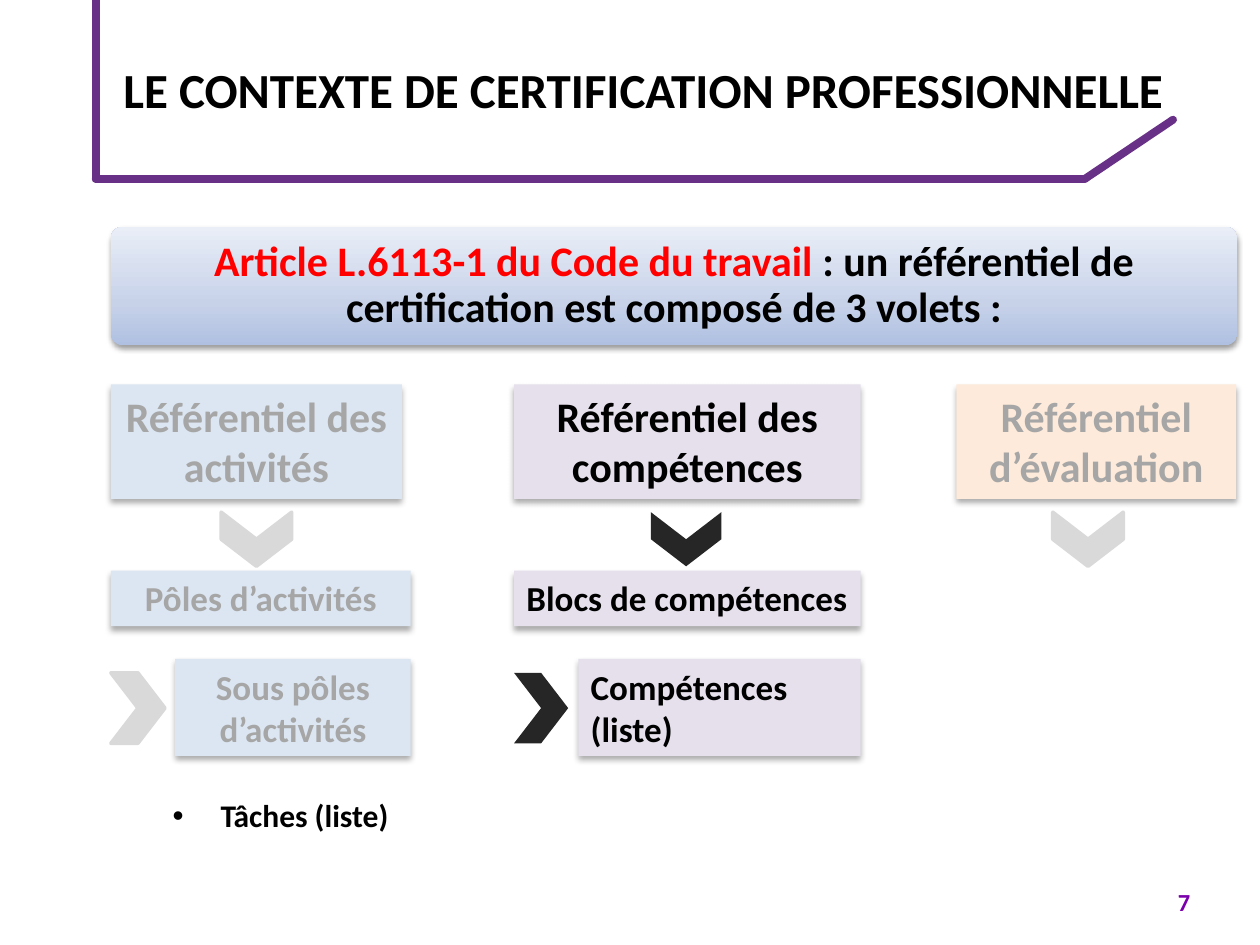
from lxml import etree
from pptx import Presentation
from pptx import util as u
from pptx.dml.color import RGBColor
from pptx.enum import shapes, text
from pptx.oxml import parse_xml
from pptx.oxml.ns import qn, nsdecls

COLORS = {
    "purple": "683086", "number": "7B00AC", "black": "000000", "red": "FF0000",
    "muted": "A6A6A6", "pale": "D9D9D9", "dark": "262626",
    "blue": "DCE6F2", "lilac": "E6E0EC", "peach": "FDEADA",
}
GRADIENT = [(0, "AFC0E1"), (35, "C7D2E9"), (100, "E9EEF7")]
FONT = "Calibri"
LEFT, CENTER = text.PP_ALIGN.LEFT, text.PP_ALIGN.CENTER
COL1, COL2, COL3 = 0.88, 4.08, 7.59
HEAD_Y, DOWN_Y, BLOCK_Y, SUB_Y = 3.05, 4.0, 4.53, 5.23
INDENT = 0.51
CHEVRON_W, CHEVRON_H = 0.43, 0.56

TITLE = "LE CONTEXTE DE CERTIFICATION PROFESSIONNELLE"
BANNER = [("Article L.6113-1 du Code du travail ", "red"),
          (": un référentiel de certification est composé de 3 volets :", "black")]
FRAME = [(0.76, 1.42, 8.61, 1.42), (8.61, 1.42, 9.31, 0.95), (0.76, 1.42, 0.76, 0)]
# text, left, top, width, height, fill, font colour, size, alignment
BOXES = [
    ("Référentiel des activités", COL1, HEAD_Y, 2.31, 0.91, "blue", "muted", 24, CENTER),
    ("Référentiel des compétences", COL2, HEAD_Y, 2.75, 0.91, "lilac", "black", 24, CENTER),
    ("Référentiel d’évaluation", COL3, HEAD_Y, 2.22, 0.91, "peach", "muted", 24, CENTER),
    ("Pôles d’activités", COL1, BLOCK_Y, 2.38, 0.44, "blue", "muted", 20, CENTER),
    ("Blocs de compétences", COL2, BLOCK_Y, 2.75, 0.44, "lilac", "black", 20, LEFT),
    ("Sous pôles d’activités", COL1 + INDENT, SUB_Y, 1.87, 0.77, "blue", "muted", 20, CENTER),
    ("Compétences (liste)", COL2 + INDENT, SUB_Y, 2.24, 0.77, "lilac", "black", 20, LEFT),
]
# left, top, rotation, colour
CHEVRONS = [
    (1.82, DOWN_Y, 90, "pale"), (5.23, DOWN_Y, 90, "dark"), (8.42, DOWN_Y, 90, "pale"),
    (COL1, SUB_Y + 0.11, 0, "pale"), (COL2, SUB_Y + 0.11, 0, "dark"),
]


def rgb(name):
    return RGBColor.from_string(COLORS[name])


def place(sp, *box):
    sp.left, sp.top, sp.width, sp.height = map(u.Inches, box)


def write(tf, runs, size, align=LEFT, anchor=text.MSO_ANCHOR.TOP):
    """Fill a text frame with one bold paragraph of (text, colour) runs."""
    tf.word_wrap = True
    tf.auto_size = text.MSO_AUTO_SIZE.NONE
    tf.vertical_anchor = anchor
    p = tf.paragraphs[0]
    p.alignment = align
    for words, color in runs:
        r = p.add_run()
        r.text = words
        r.font.name, r.font.size, r.font.bold = FONT, u.Pt(size), True
        r.font.color.rgb = rgb(color)
    return p


def add_block(s, kind, box, color):
    sp = s.shapes.add_shape(kind, *map(u.Inches, box))
    sp.fill.solid()
    sp.fill.fore_color.rgb = rgb(color)
    sp.line.fill.background()
    sp.shadow.inherit = False
    return sp


def add_shadow(sp, alpha, blur, dist):
    effects = sp._element.spPr.find(qn("a:effectLst"))
    effects.append(parse_xml(
        f'<a:outerShdw {nsdecls("a")} blurRad="{u.Pt(blur)}" dist="{u.Pt(dist)}" '
        f'dir="5400000" rotWithShape="0"><a:srgbClr val="000000">'
        f'<a:alpha val="{alpha * 1000}"/></a:srgbClr></a:outerShdw>'))


def set_gradient(sp, stops):
    spPr = sp._element.spPr
    gs = "".join(f'<a:gs pos="{pos * 1000}"><a:srgbClr val="{c}"/></a:gs>' for pos, c in stops)
    spPr.replace(spPr.find(qn("a:solidFill")), parse_xml(
        f'<a:gradFill {nsdecls("a")} rotWithShape="1"><a:gsLst>{gs}</a:gsLst>'
        f'<a:lin ang="16200000" scaled="0"/></a:gradFill>'))


def add_frame_line(s, ends):
    line = s.shapes.add_connector(shapes.MSO_CONNECTOR.STRAIGHT, *map(u.Inches, ends))
    line.line.color.rgb = rgb("purple")
    line.line.width = u.Pt(4.5)
    line.line._get_or_add_ln().set("cap", "rnd")
    etree.SubElement(line._element.spPr, qn("a:effectLst"))


def main():
    prs = Presentation()
    prs.slide_width, prs.slide_height = u.Inches(10), u.Inches(7.5)
    s = prs.slides.add_slide(prs.slide_layouts[1])
    kinds = shapes.MSO_SHAPE

    for ends in FRAME:
        add_frame_line(s, ends)

    title, tasks = s.placeholders
    place(title, 0.88, 0, 8.62, 1.41)
    write(title.text_frame, [(TITLE, "black")], 28, anchor=text.MSO_ANCHOR.MIDDLE)

    place(tasks, 1.27, 6.27, 2.5, 0.4)
    p = write(tasks.text_frame, [("Tâches (liste)", "black")], 18)
    p.space_before = u.Pt(0)
    pPr = p._p.get_or_add_pPr()
    pPr.set("marL", str(u.Inches(0.38)))
    pPr.set("indent", str(u.Inches(-0.38)))

    number = s.shapes.add_textbox(*map(u.Inches, (9.25, 6.99, 0.67, 0.4)))
    write(number.text_frame, [("7", "number")], 14)

    banner = add_block(s, kinds.ROUNDED_RECTANGLE, (COL1, 1.8, 8.94, 0.94), "blue")
    banner.adjustments[0] = 0.1
    set_gradient(banner, GRADIENT)
    add_shadow(banner, 38, 3.1, 1.6)
    p = write(banner.text_frame, BANNER, 24, CENTER, text.MSO_ANCHOR.MIDDLE)
    p.line_spacing = 0.9

    for words, x, y, w, h, fill, color, size, align in BOXES:
        box = add_block(s, kinds.RECTANGLE, (x, y, w, h), fill)
        add_shadow(box, 32, 3.5, 2.2)
        write(box.text_frame, [(words, color)], size, align)

    for x, y, rotation, color in CHEVRONS:
        chevron = add_block(s, kinds.CHEVRON, (x, y, CHEVRON_W, CHEVRON_H), color)
        chevron.rotation = rotation
        if color == "pale":
            chevron.line.color.rgb = rgb(color)
            chevron.line.width = u.Pt(2)

    prs.save("out.pptx")


if __name__ == "__main__":
    main()
